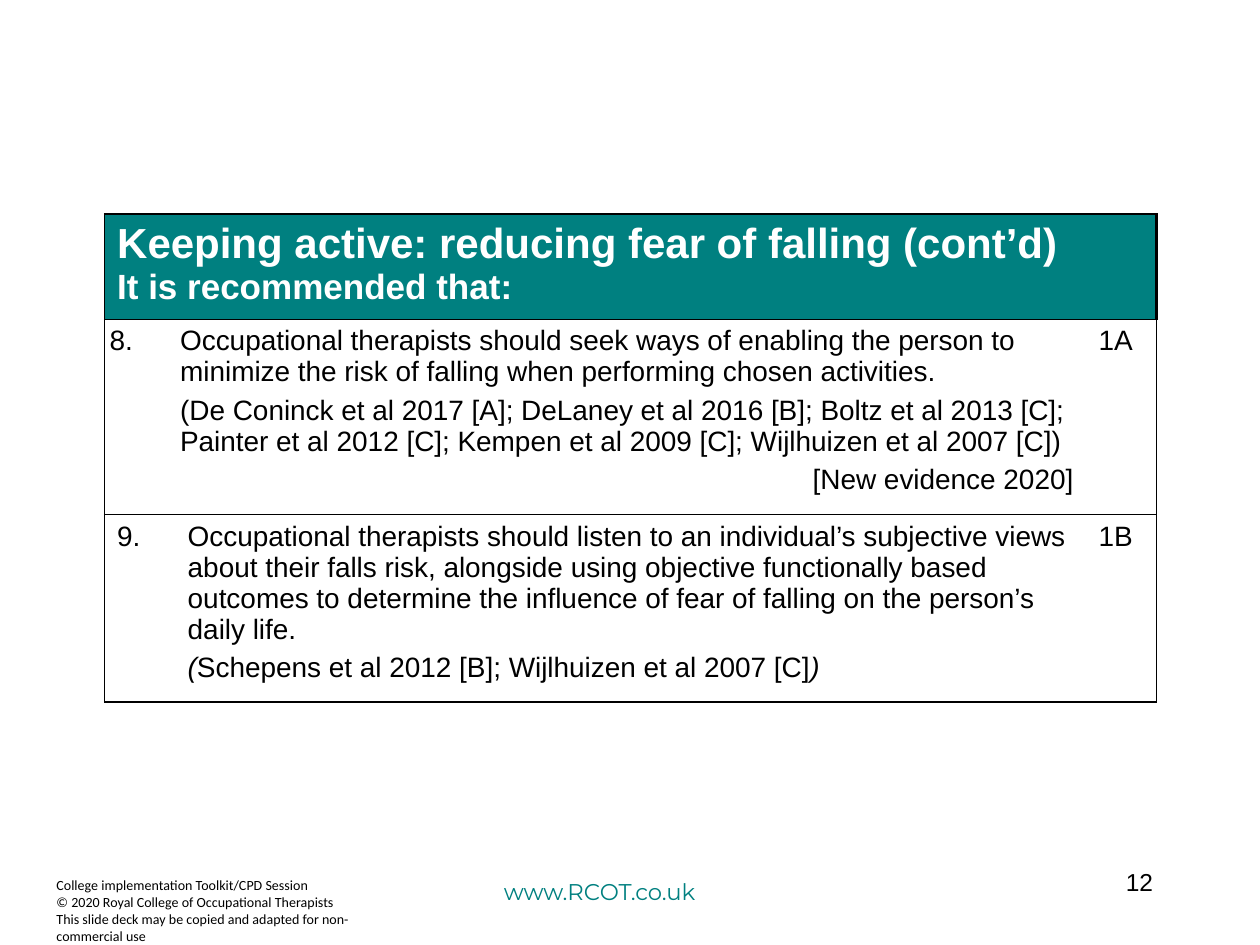
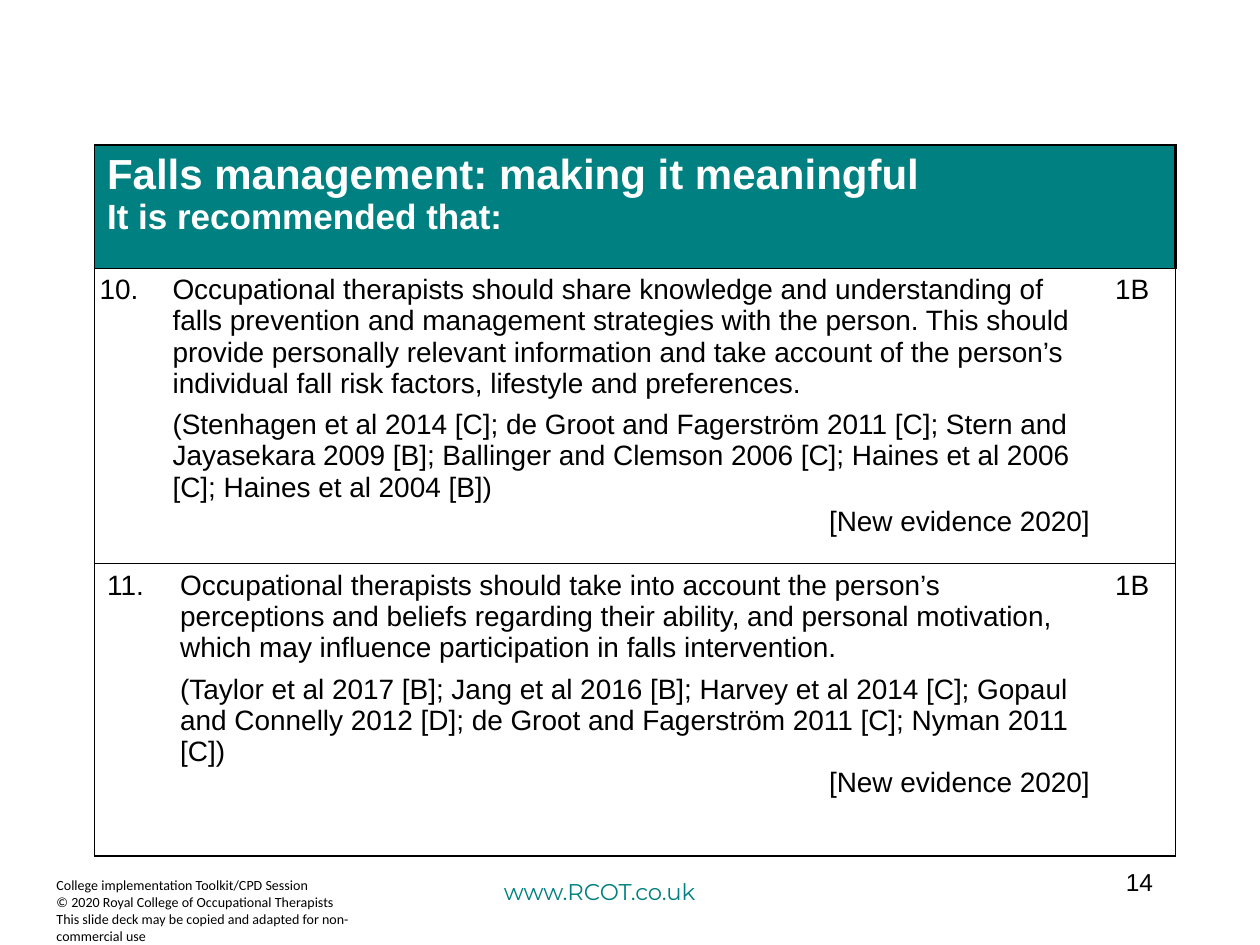
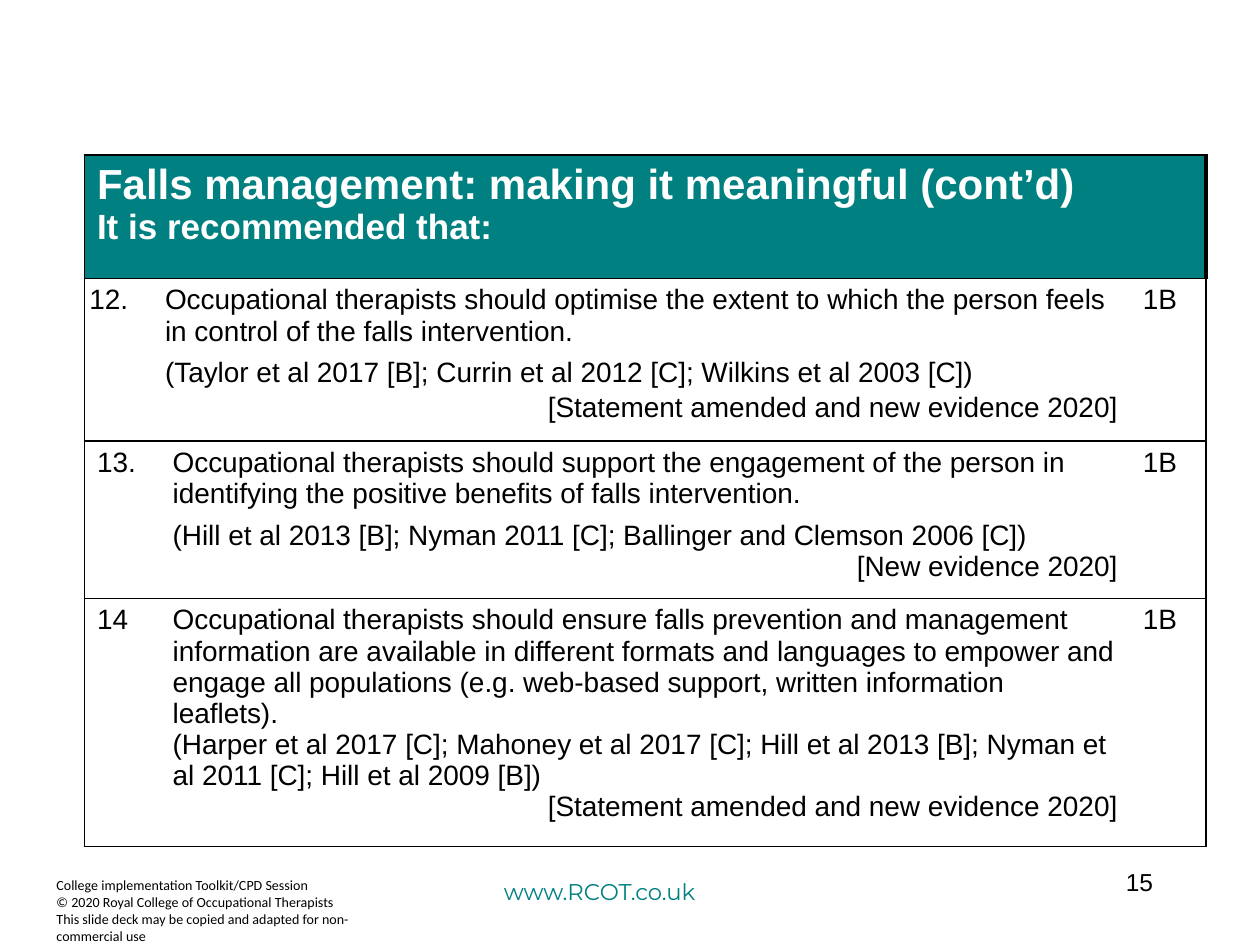
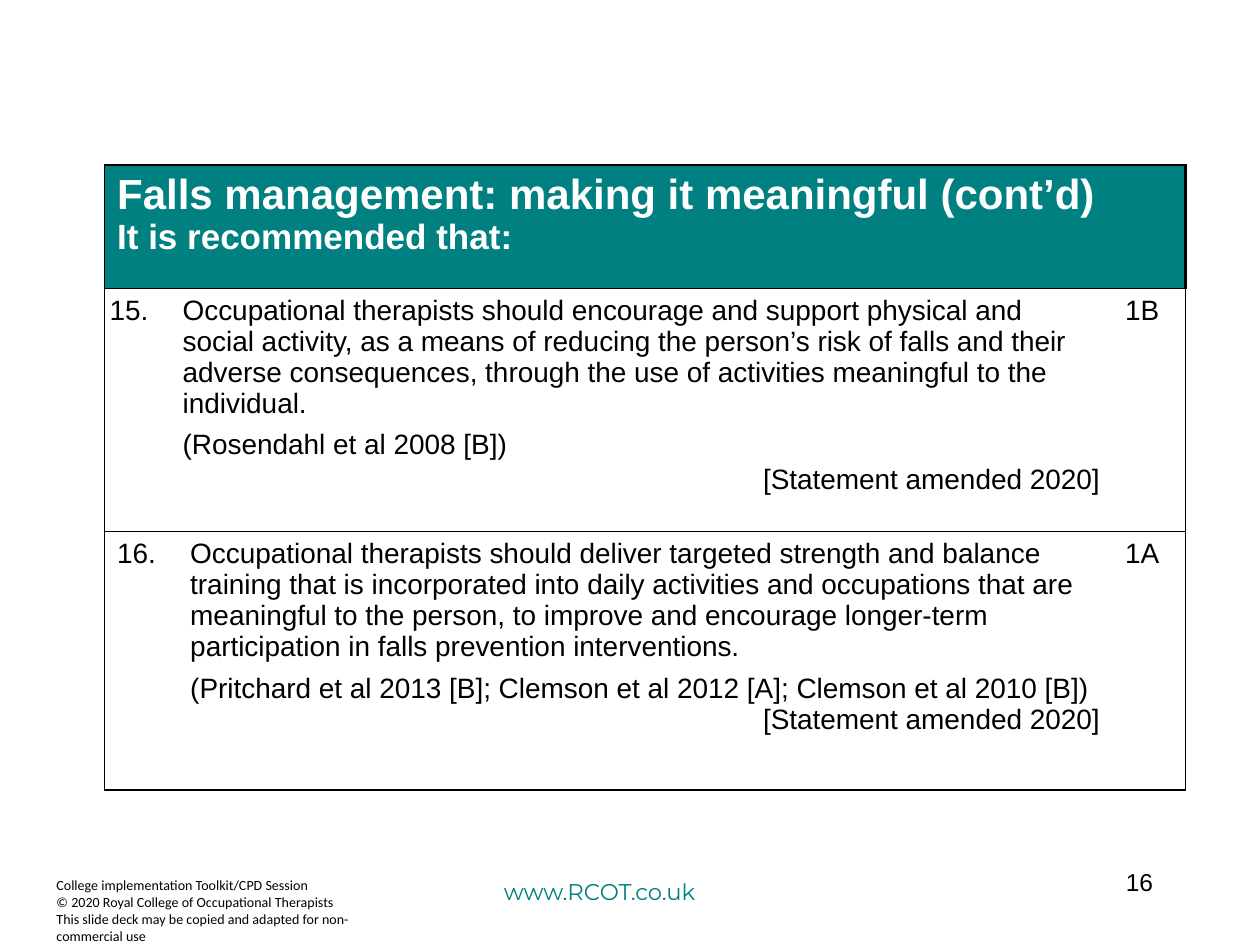
"""Build four slides of falls recommendations, each with one table and a footer."""
from dataclasses import dataclass

from lxml import etree
from pptx import Presentation
from pptx.dml.color import RGBColor
from pptx.enum.text import PP_ALIGN
from pptx.oxml.ns import qn
from pptx.util import Inches, Pt

LEFT, RIGHT = PP_ALIGN.LEFT, PP_ALIGN.RIGHT
COLORS = {"teal": "008080", "white": "FFFFFF", "black": "000000"}
BODY_FONT, FOOTER_FONT, WEB_FONT = "Arial", "Calibri", "Montserrat"
BODY_SIZE = 16
HANGING_INDENT = 0.58
CELL_INSET, NARROW_INSET = 0.1, 0.04
THIN, THICK = 1, 2.25
WEB_BOX = (3.9, 6.92, 6.1, 0.5)
NOTICE_BOX = (0.35, 6.91, 2.76, 0.77)
NUMBER_BOX = (7.17, 6.83, 2.08, 0.5)
NOTICE = [
    "College implementation Toolkit/CPD Session",
    "© 2020 Royal College of Occupational Therapists",
    "This slide deck may be copied and adapted for non-commercial use",
]

# Space before and after the statement, the evidence and the remark, in points.
EVEN = [(0, 2), (2, 2), (2, 2)]
LOOSE = [(0, 6), (0, 0), (2, 2)]
SNUG = [(0, 6), (0, 0), (0, 0)]
TIGHT = [(0, 0), (0, 0), (0, 0)]


@dataclass
class Recommendation:
    """One table row; asterisks in a text enclose italics."""
    number: str
    grade: str
    height: float
    spacing: list
    texts: list


@dataclass
class RecommendationSlide:
    """The content and the table box of one slide."""
    page: str
    title: str
    left: float
    top: float
    width: float
    side_width: float
    header_height: float
    rows: list


SLIDES = [
    RecommendationSlide(
        "12", "Keeping active: reducing fear of falling (cont’d)",
        0.83, 1.7, 8.35, 0.56, 0.83, [
            Recommendation("8.", "1A", 1.55, EVEN, [
                "Occupational therapists should seek ways of enabling the person to "
                "minimize the risk of falling when performing chosen activities.",
                "(De Coninck et al 2017 [A]; DeLaney et al 2016 [B]; Boltz et al 2013 [C]; "
                "Painter et al 2012 [C]; Kempen et al 2009 [C]; Wijlhuizen et al 2007 [C])",
                "[New evidence 2020]"]),
            Recommendation("9.", "1B", 1.48, EVEN, [
                "Occupational therapists should listen to an individual’s subjective views "
                "about their falls risk, alongside using objective functionally based "
                "outcomes to determine the influence of fear of falling on the person’s "
                "daily life.",
                "*(*Schepens et al 2012 [B]; Wijlhuizen et al 2007 [C]*)*"]),
        ]),
    RecommendationSlide(
        "14", "Falls management: making it meaningful",
        0.75, 1.15, 8.58, 0.58, 0.98, [
            Recommendation("10.", "1B", 2.34, LOOSE, [
                "Occupational therapists should share knowledge and understanding of falls "
                "prevention and management strategies with the person. This should provide "
                "personally relevant information and take account of the person’s "
                "individual fall risk factors, lifestyle and preferences.",
                "(Stenhagen et al 2014 [C]; de Groot and Fagerström 2011 [C]; Stern and "
                "Jayasekara 2009 [B]; Ballinger and Clemson 2006 [C]; Haines et al 2006 "
                "[C]; Haines et al 2004 [B])",
                "[New evidence 2020]"]),
            Recommendation("11.", "1B", 2.32, SNUG, [
                "Occupational therapists should take into account the person’s perceptions "
                "and beliefs regarding their ability, and personal motivation, which may "
                "influence participation in falls intervention.",
                "(Taylor et al 2017 [B]; Jang et al 2016 [B]; Harvey et al 2014 [C]; Gopaul "
                "and Connelly 2012 [D]; de Groot and Fagerström 2011 [C]; Nyman 2011 [C])",
                "[New evidence 2020]"]),
        ]),
    RecommendationSlide(
        "15", "Falls management: making it meaningful (cont’d)",
        0.67, 1.23, 8.9, 0.6, 0.98, [
            Recommendation("12.", "1B", 1.29, LOOSE, [
                "Occupational therapists should optimise the extent to which the person "
                "feels in control of the falls intervention.",
                "(Taylor et al 2017 [B]; Currin et al 2012 [C]; Wilkins et al 2003 [C])",
                "[Statement amended and new evidence 2020]"]),
            Recommendation("13.", "1B", 1.25, SNUG, [
                "Occupational therapists should support the engagement of the person in "
                "identifying the positive benefits of falls intervention.",
                "(Hill et al 2013 [B]; Nyman 2011 [C]; Ballinger and Clemson 2006 [C])",
                "[New evidence 2020]"]),
            Recommendation("14", "1B", 1.97, TIGHT, [
                "Occupational therapists should ensure falls prevention and management "
                "information are available in different formats and languages to empower "
                "and engage all populations (e.g. web-based support, written information "
                "leaflets).",
                "(Harper et al 2017 [C]; Mahoney et al 2017 [C]; Hill et al 2013 [B]; Nyman "
                "et al 2011 [C]; Hill et al 2009 [B])",
                "[Statement amended and new evidence 2020]"]),
        ]),
    RecommendationSlide(
        "16", "Falls management: making it meaningful (cont’d)",
        0.83, 1.31, 8.58, 0.58, 0.98, [
            Recommendation("15.", "1B", 1.93, LOOSE, [
                "Occupational therapists should encourage and support physical and social "
                "activity, as a means of reducing the person’s risk of falls and their "
                "adverse consequences, through the use of activities meaningful to the "
                "individual.",
                "(Rosendahl et al 2008 [B])",
                "[Statement amended 2020]"]),
            Recommendation("16.", "1A", 2.05, SNUG, [
                "Occupational therapists should deliver targeted strength and balance "
                "training that is incorporated into daily activities and occupations that "
                "are meaningful to the person, to improve and encourage longer-term "
                "participation in falls prevention interventions.",
                "(Pritchard et al 2013 [B]; Clemson et al 2012 [A]; Clemson et al 2010 [B])",
                "[Statement amended 2020]"]),
        ]),
]


def next_paragraph(text_frame, index):
    """Return the first paragraph of a frame, or a new one after it."""
    return text_frame.add_paragraph() if index else text_frame.paragraphs[0]


def style_paragraph(paragraph, size, color, font=BODY_FONT, bold=False, align=LEFT):
    """Set the font and alignment of a paragraph."""
    paragraph.alignment = align
    paragraph.font.name = font
    paragraph.font.size = Pt(size)
    paragraph.font.bold = bold
    paragraph.font.color.rgb = RGBColor.from_string(COLORS[color])


def add_text(slide, box, lines, size, color, font, align=LEFT):
    """Add a wrapping text box with one paragraph for each line."""
    text_frame = slide.shapes.add_textbox(*map(Inches, box)).text_frame
    text_frame.word_wrap = True
    for index, line in enumerate(lines):
        paragraph = next_paragraph(text_frame, index)
        paragraph.text = line
        style_paragraph(paragraph, size, color, font, align=align)


def add_footer(slide, page):
    """Add the web address, the notice and the page number."""
    add_text(slide, WEB_BOX, ["www.RCOT.co.uk"], 13, "teal", WEB_FONT)
    add_text(slide, NOTICE_BOX, NOTICE, 8, "black", FOOTER_FONT)
    add_text(slide, NUMBER_BOX, [page], 14, "black", BODY_FONT, RIGHT)


def set_borders(cell, left=0, right=0, top=THIN, bottom=THIN):
    """Draw the cell borders in the given widths, where 0 hides one."""
    properties = cell._tc.get_or_add_tcPr()
    for side, width in zip("LRTB", (left, right, top, bottom)):
        line = etree.SubElement(properties, qn(f"a:ln{side}"), w=str(Pt(width)))
        if width:
            fill = etree.SubElement(line, qn("a:solidFill"))
            etree.SubElement(fill, qn("a:srgbClr"), val=COLORS["black"])
        else:
            etree.SubElement(line, qn("a:noFill"))


def fill_header(table, title):
    """Merge the top row and write the title and the lead-in."""
    cell = table.cell(0, 0)
    cell.merge(table.cell(0, 2))
    set_borders(cell, left=THIN, right=THICK)
    cell.fill.solid()
    cell.fill.fore_color.rgb = RGBColor.from_string(COLORS["teal"])
    lines = [(title, 24), ("It is recommended that:", 20)]
    for index, (text, size) in enumerate(lines):
        paragraph = next_paragraph(cell.text_frame, index)
        paragraph.text = text
        style_paragraph(paragraph, size, "white", bold=True)


def fill_statement(cell, recommendation):
    """Write the statement, its evidence and the right-aligned remark."""
    for index, text in enumerate(recommendation.texts):
        paragraph = next_paragraph(cell.text_frame, index)
        for position, part in enumerate(text.split("*")):
            if part:
                run = paragraph.add_run()
                run.text = part
                if position % 2:
                    run.font.italic = True
        before, after = recommendation.spacing[index]
        paragraph.space_before, paragraph.space_after = Pt(before), Pt(after)
        align = RIGHT if text.startswith("[") else LEFT
        style_paragraph(paragraph, BODY_SIZE, "black", align=align)


def fill_recommendation(cells, recommendation, inset):
    """Fill one row with the number, the statement and the grade."""
    number, statement, grade = cells
    for cell, text in ((number, recommendation.number), (grade, recommendation.grade)):
        cell.text = text
        style_paragraph(cell.text_frame.paragraphs[0], BODY_SIZE, "black")
    properties = number.text_frame.paragraphs[0]._p.get_or_add_pPr()
    properties.set("marL", str(Inches(HANGING_INDENT)))
    properties.set("indent", str(-Inches(HANGING_INDENT)))
    fill_statement(statement, recommendation)
    number.margin_left = statement.margin_left = Inches(inset)
    set_borders(number, left=THIN)
    set_borders(statement)
    set_borders(grade, right=THIN)
    for cell in cells:
        cell.fill.background()


def add_recommendations(slide, content):
    """Add the table of recommendations in its box."""
    heights = [content.header_height] + [row.height for row in content.rows]
    box = (content.left, content.top, content.width, sum(heights))
    table = slide.shapes.add_table(len(heights), 3, *map(Inches, box)).table
    table.first_row = table.horz_banding = False
    side = content.side_width
    for column, width in zip(table.columns, (side, content.width - 2 * side, side)):
        column.width = Inches(width)
    for row, height in zip(table.rows, heights):
        row.height = Inches(height)
    fill_header(table, content.title)
    for index, recommendation in enumerate(content.rows, 1):
        cells = [table.cell(index, column) for column in range(3)]
        inset = NARROW_INSET if index == 1 else CELL_INSET
        fill_recommendation(cells, recommendation, inset)


def main():
    """Build and save the presentation."""
    presentation = Presentation()
    presentation.slide_width, presentation.slide_height = Inches(10), Inches(7.5)
    blank_layout = presentation.slide_layouts[6]
    for content in SLIDES:
        slide = presentation.slides.add_slide(blank_layout)
        add_footer(slide, content.page)
        add_recommendations(slide, content)
    presentation.save("out.pptx")


if __name__ == "__main__":
    main()
